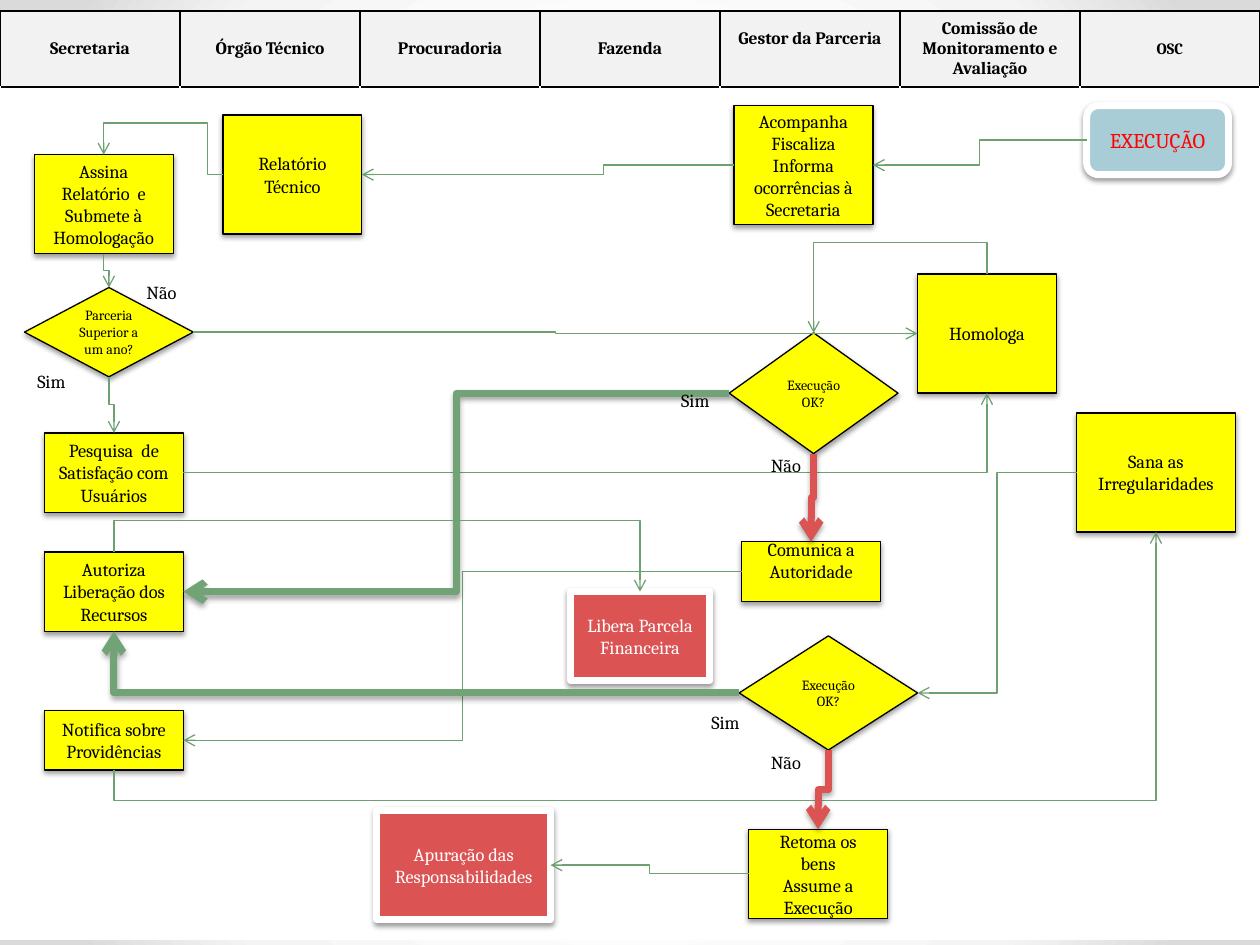
from lxml.etree import SubElement, Element
from pptx import Presentation
from pptx.dml.color import RGBColor
from pptx.enum.shapes import MSO_CONNECTOR as Link, MSO_SHAPE as Kind
from pptx.enum.text import MSO_ANCHOR as Anchor, PP_ALIGN as Align
from pptx.oxml.ns import qn
from pptx.util import Pt

FONT = "Cambria"
BLACK, WHITE, YELLOW, RED = "000000", "FFFFFF", "FFFF00", "DB5353"
THIN, GREEN = "6EA172", "72A376"
WIDE = 79.4

LANES = ["Secretaria", "Órgão Técnico", "Procuradoria", "Fazenda", "Gestor da Parceria",
         "Comissão de Monitoramento e Avaliação", "OSC"]
ROWS = [43.2, 55.4, 58.3, 49, 61.9, 82.8, 74.9, 105.1]
BACK = [(0, WHITE), (50, WHITE), (76, "F4F4F4"), (92, "DADADA"), (100, "DADADA")]

# name: (style, left, top, width, height, paragraphs)
BOXES = {
    "start": ("start", 621, 60.4, 81, 39.4, ["EXECUÇÃO"]),
    "follow": ("step", 419.4, 60.4, WIDE, 68,
               ["Acompanha", "Fiscaliza", "Informa ocorrências à Secretaria"]),
    "report": ("step", 127.4, 65.8, WIDE, 68, ["Relatório Técnico"]),
    "sign": ("step", 19.6, 88.4, WIDE, 56.7, ["Assina Relatório  e Submete à Homologação"]),
    "approve": ("step", 524.3, 156.6, WIDE, 68, ["Homologa"]),
    "year": ("test", 14, 164.3, 96.5, 51, ["Parceria Superior a um ano?"]),
    "survey": ("step", 25.4, 247.4, WIDE, 45.4, ["Pesquisa  de Satisfação com Usuários"]),
    "check": ("test", 416.7, 190.2, 96.5, 69, ["Execução OK?"]),
    "tell": ("step", 423.8, 309.6, WIDE, 34, ["Comunica a Autoridade"]),
    "notify": ("step", 25.4, 406, WIDE, 34, ["Notifica sobre Providências"]),
    "fix": ("step", 615.2, 236, 90.7, 68, ["Sana as Irregularidades"]),
    "free": ("step", 25.4, 315.4, WIDE, 45.4, ["Autoriza Liberação dos Recursos"]),
    "again": ("test", 422.4, 363.4, 102, 65.2, ["Execução OK?"]),
    "retake": ("step", 427.8, 473.8, WIDE, 51, ["Retoma os bens", "Assume a Execução"]),
    "probe": ("end", 215.4, 463.2, 99.2, 62.4, ["Apuração das Responsabilidades"]),
    "pay": ("end", 326, 338, WIDE, 51, ["Libera Parcela Financeira"]),
}
# style: (shape, fill, line, line width, text colour, text size)
STYLES = {
    "start": (Kind.ROUNDED_RECTANGLE, "A8CDD7", WHITE, 4, "FF0000", 12),
    "step": (Kind.RECTANGLE, YELLOW, BLACK, 0.75, BLACK, 10.5),
    "test": (Kind.FLOWCHART_DECISION, YELLOW, BLACK, 0.75, BLACK, 8),
    "end": (Kind.RECTANGLE, RED, WHITE, 4, WHITE, 10.5),
}
# from, side, to, side, colour, bends as fractions of the span
LINKS = [
    ("start", "L", "follow", "R", THIN, [0.5]),
    ("follow", "L", "report", "R", THIN, [0.35]),
    ("report", "L", "sign", "T", THIN, [0.13, 2.59]),
    ("sign", "B", "year", "T", THIN, [0.5]),
    ("year", "R", "approve", "L", THIN, [0.5]),
    ("year", "B", "survey", "T", THIN, [0.5]),
    ("survey", "R", "approve", "B", THIN, []),
    ("approve", "T", "check", "T", THIN, [-0.54]),
    ("tell", "L", "notify", "R", THIN, [0.5]),
    ("notify", "B", "fix", "B", THIN, [-0.13]),
    ("check", "B", "tell", "T", RED, [0.5]),
    ("check", "L", "free", "R", GREEN, [0.5]),
    ("fix", "L", "again", "R", THIN, [0.5]),
    ("again", "B", "retake", "T", RED, [0.5]),
    ("again", "L", "free", "B", GREEN, []),
    ("retake", "L", "probe", "R", THIN, [0.5]),
    ("free", "T", "pay", "T", THIN, [-0.79]),
]
LABELS = [("Sim", 14.2, 208), ("Não", 76.6, 157), ("Não", 433.4, 255.8),
          ("Sim", 382.2, 219), ("Não", 433.4, 425.8), ("Sim", 399.4, 403)]
SITES = "TLBR"


def rgb(code):
    return RGBColor.from_string(code)


def add(node, tag, **attrs):
    return SubElement(node, qn(tag), {k: str(v) for k, v in attrs.items()})


def write(frame, lines, size, color, bold=False, align=Align.CENTER):
    frame.text = "\n".join(lines)
    for para in frame.paragraphs:
        para.alignment = align
        for run in para.runs:
            font = run.font
            font.name, font.size, font.bold = FONT, Pt(size), bold
            font.color.rgb = rgb(color)


def shade(list_, alpha, dist):
    """Put a soft downward shadow in an effect list."""
    glow = add(list_, "a:outerShdw", blurRad=Pt(3.1), dist=Pt(dist), dir=5400000,
               algn="ctr", rotWithShape=0)
    add(add(glow, "a:srgbClr", val=BLACK), "a:alpha", val=alpha * 1000)


def paint(slide):
    """Fill the background with a round gradient."""
    slide.background.fill.gradient()
    grad = slide.element.find(".//" + qn("a:gradFill"))
    for node in list(grad):
        grad.remove(node)
    stops = add(grad, "a:gsLst")
    for pos, color in BACK:
        add(add(stops, "a:gs", pos=pos * 1000), "a:srgbClr", val=color)
    add(add(grad, "a:path", path="circle"), "a:fillToRect", l=50000, t=50000, r=50000, b=50000)


def edge(cell, sides):
    props = cell._tc.get_or_add_tcPr()
    for i, side in enumerate(sides):
        line = Element(qn("a:ln" + side), w=str(Pt(1)))
        add(add(line, "a:solidFill"), "a:srgbClr", val=BLACK)
        props.insert(i, line)


def add_lanes(slide):
    grid = slide.shapes.add_table(len(ROWS), len(LANES), 0, Pt(6.4), Pt(720), Pt(sum(ROWS))).table
    grid.first_row = grid.horz_banding = False
    for row, high in zip(grid.rows, ROWS):
        row.height = Pt(high)
    for r in range(len(ROWS)):
        for c, name in enumerate(LANES):
            cell = grid.cell(r, c)
            cell.fill.solid()
            cell.fill.fore_color.rgb = rgb(WHITE if r else "F2F2F2")
            if r == 0:
                write(cell.text_frame, [name], 9 if name == "OSC" else 10, BLACK, True)
                cell.vertical_anchor = Anchor.MIDDLE
                if name == "Gestor da Parceria":
                    cell.margin_bottom = Pt(15.6)
            edge(cell, "LRTB" if r == 0 else "T" if r == 1 else "")


def add_box(slide, name):
    style, x, y, w, h, lines = BOXES[name]
    kind, fill, line, width, color, size = STYLES[style]
    box = slide.shapes.add_shape(kind, Pt(x), Pt(y), Pt(w), Pt(h))
    box.fill.solid()
    box.fill.fore_color.rgb = rgb(fill)
    box.line.color.rgb = rgb(line)
    box.line.width = Pt(width)
    box.shadow.inherit = False
    shade(box.element.spPr.find(qn("a:effectLst")), 38, 1.6)
    frame = box.text_frame
    frame.word_wrap = True
    frame.vertical_anchor = Anchor.MIDDLE
    if name == "tell":
        frame.margin_bottom = Pt(16.2)
    write(frame, lines, size, color)
    return box


def spot(name, side):
    x, y, w, h = BOXES[name][1:5]
    return {"T": (x + w / 2, y), "B": (x + w / 2, y + h),
            "L": (x, y + h / 2), "R": (x + w, y + h / 2)}[side]


def add_link(slide, boxes, one, out, two, into, color, bends):
    (x1, y1), (x2, y2) = spot(one, out), spot(two, into)
    link = slide.shapes.add_connector(Link.ELBOW, Pt(x1), Pt(y1), Pt(x2), Pt(y2))
    link.begin_connect(boxes[one], SITES.index(out))
    link.end_connect(boxes[two], SITES.index(into))
    props = link.element.spPr
    dx, dy = x2 - x1, y2 - y1
    w, h, flip_h, flip_v = abs(dx), abs(dy), dx < 0, dy < 0
    frame = props.find(qn("a:xfrm"))
    if out in "TB":  # leaves upright: a quarter turn swaps the two axes
        w, h, flip_h, flip_v = h, w, dy < 0, dx > 0
        frame.set("rot", "5400000")
    link.left, link.top = Pt((x1 + x2 - w) / 2), Pt((y1 + y2 - h) / 2)
    link.width, link.height = Pt(w), Pt(h)
    frame.set("flipH", str(int(flip_h)))
    frame.set("flipV", str(int(flip_v)))
    shape = props.find(qn("a:prstGeom"))
    shape.set("prst", f"bentConnector{len(bends) + 2}")
    for i, bend in enumerate(bends, 1):
        add(shape.find(qn("a:avLst")), "a:gd", name=f"adj{i}", fmla=f"val {round(bend * 100000)}")
    link.line.color.rgb = rgb(color)
    link.line.width = Pt(0.75 if color == THIN else 4)
    add(props.find(qn("a:ln")), "a:tailEnd", type="arrow")
    effects = add(props, "a:effectLst")
    if color != THIN:
        shade(effects, 35, 1.8)


def main():
    deck = Presentation()
    deck.slide_width, deck.slide_height = Pt(720), Pt(540)
    slide = deck.slides.add_slide(deck.slide_layouts[6])
    paint(slide)
    add_lanes(slide)
    boxes = {name: add_box(slide, name) for name in BOXES}
    for link in LINKS:
        add_link(slide, boxes, *link)
    for text, x, y in LABELS:
        label = slide.shapes.add_textbox(Pt(x), Pt(y), Pt(34), Pt(20))
        label.text_frame.word_wrap = True
        write(label.text_frame, [text], 10.5, BLACK, align=Align.LEFT)
    deck.save("out.pptx")


if __name__ == "__main__":
    main()
